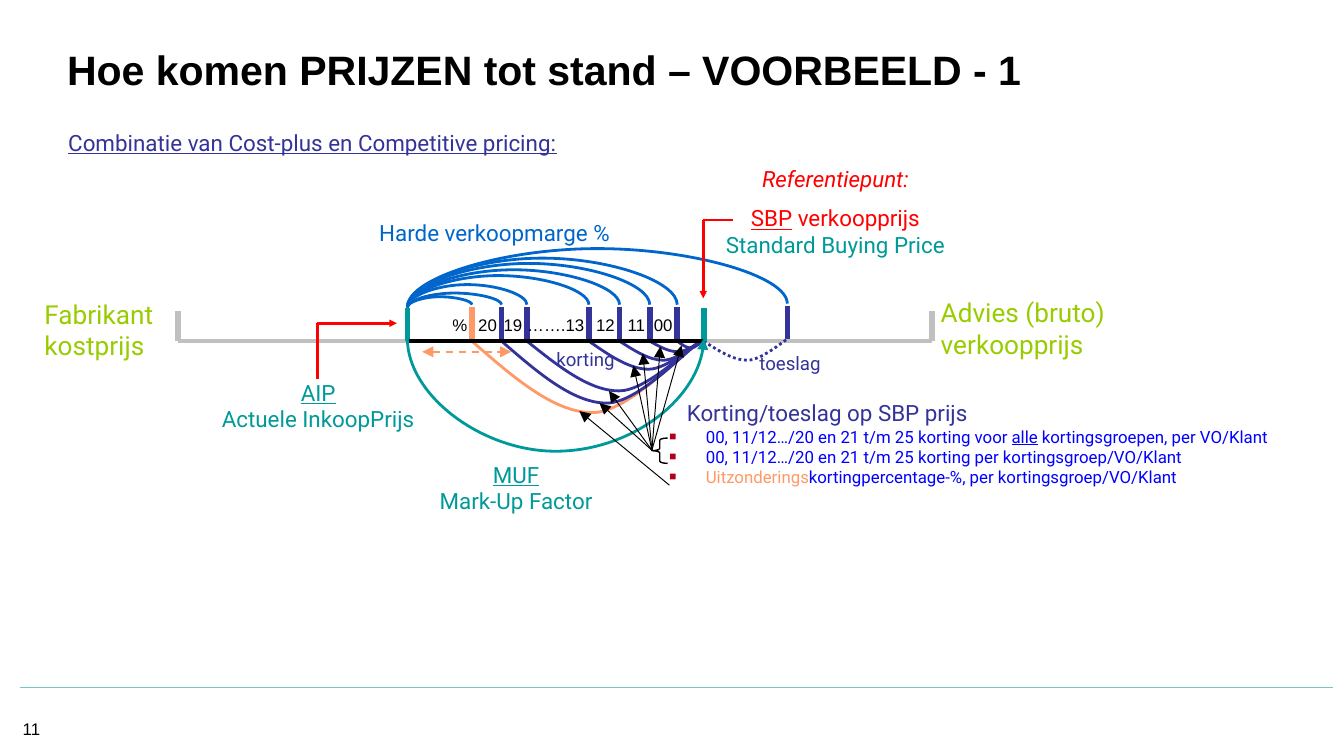
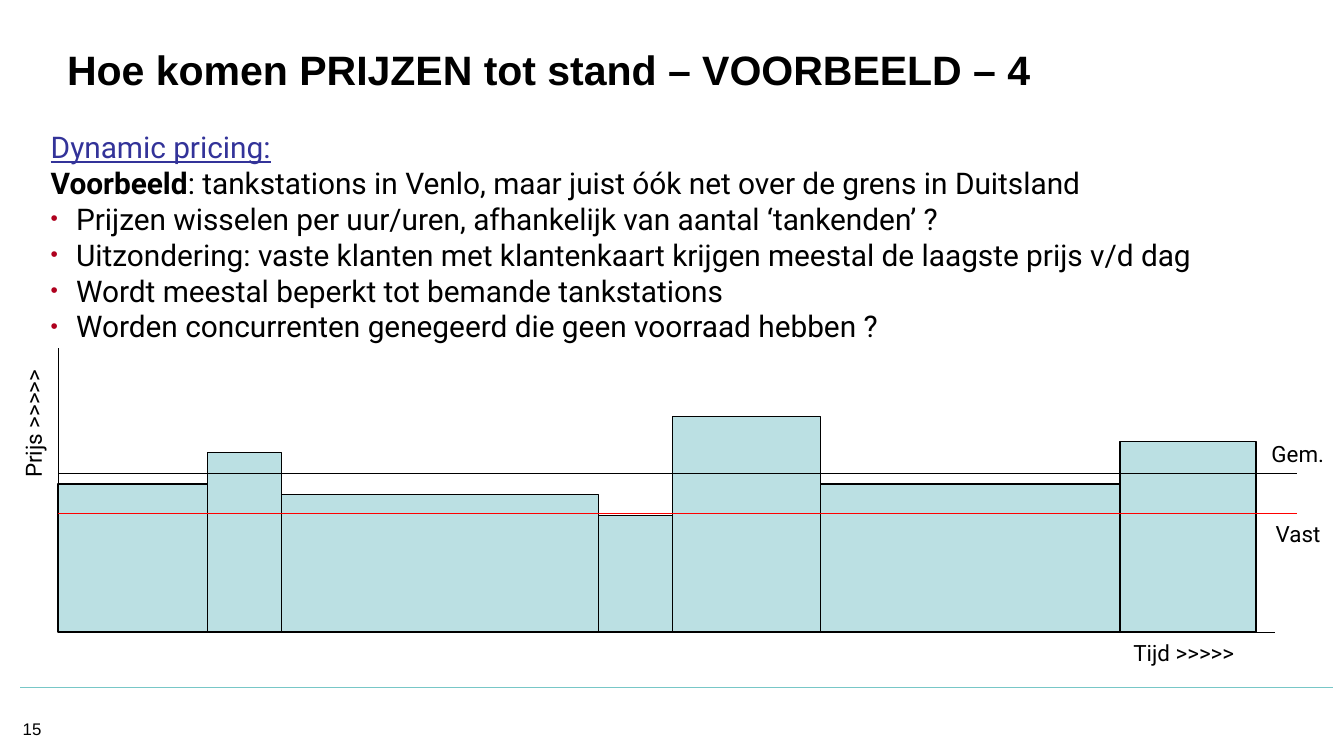
from pptx import Presentation
from pptx.dml.color import RGBColor
from pptx.enum import dml, shapes, text
from pptx.oxml import ns, xmlchemy as xml
from pptx.util import Cm, Pt

BLACK = RGBColor(0, 0, 0)
RED = RGBColor(0xFF, 0, 0)
BLUE = RGBColor(0, 0, 0xFF)
SKY = RGBColor(0, 0x66, 0xCC)
INDIGO = RGBColor(0x33, 0x33, 0x99)
TEAL = RGBColor(0, 0x99, 0x99)
LIME = RGBColor(0x99, 0xCC, 0)
PEACH = RGBColor(0xFF, 0x99, 0x66)
GREY = RGBColor(0xC0, 0xC0, 0xC0)
AQUA = RGBColor(0xBB, 0xE0, 0xE3)
RULE = RGBColor(0x78, 0xC7, 0xC7)
BULLET = "AF011E"

MID = text.PP_ALIGN.CENTER
END = text.PP_ALIGN.RIGHT
DASH = dml.MSO_LINE.DASH
DOT = dml.MSO_LINE.ROUND_DOT
UNDER = {"under": True}

MARKS = [
    ("%", 1.22, -0.84, 1.35, PEACH),
    ("20", 1.78, -0.91, 1.17, INDIGO),
    ("19", 2.26, -1.07, 0.94, INDIGO),
    ("…….13", 3.43, -1.24, 0.53, INDIGO),
    ("12", 4.01, -1.35, 0.36, INDIGO),
    ("11", 4.58, -1.47, 0.2, INDIGO),
    ("00", 5.1, -1.57, 0.13, INDIGO),
]
SBP = 5.6
EXTRA = 7.18
LEFT, RIGHT = -4.34, 9.91
FAN = [(3.63, 1.17), (3.81, 0.94), (4.27, 0.46),
       (4.45, 0.23), (4.78, 0.1), (5.18, 0.08)]
BARS = [(2.82, 2.8), (1.4, 3.4), (5.99, 2.6), (1.4, 2.2),
        (2.8, 4.08), (5.66, 2.8), (2.57, 3.6)]


def node(parent, tag, **attrs):
    item = xml.OxmlElement(tag)
    for key, value in attrs.items():
        item.set(key, str(value))
    parent.append(item)
    return item


def para(*runs, **style):
    return runs, style


def layout(par, margin=0, bullet=None, hang=0):
    props = par._p.get_or_add_pPr()
    props.set("marL", str(Cm(margin + hang)))
    props.set("indent", str(-Cm(hang)))
    if bullet:
        node(node(props, "a:buClr"), "a:srgbClr", val=BULLET)
        node(props, "a:buSzPct", val=70000)
        node(props, "a:buFont", typeface="Arial")
        node(props, "a:buChar", char=bullet)
    else:
        node(props, "a:buNone")


def say(slide, box, *paras, size=12, color=BLACK, font="Roboto", align=None,
        inset=(0.25, 0.13), anchor=text.MSO_ANCHOR.TOP, turn=0, **base):
    shape = slide.shapes.add_textbox(*map(Cm, box))
    shape.rotation = turn
    frame = shape.text_frame
    frame.word_wrap = True
    frame.vertical_anchor = anchor
    frame.margin_left = frame.margin_right = Cm(inset[0])
    frame.margin_top = frame.margin_bottom = Cm(inset[1])
    for i, item in enumerate(paras):
        runs, own = ((item,), {}) if isinstance(item, str) else item
        style = {"size": size, "color": color, **base, **own}
        par = frame.paragraphs[0] if i == 0 else frame.add_paragraph()
        layout(par, **{k: style[k] for k in ("margin", "bullet", "hang")
                       if k in style})
        par.alignment = align
        if "after" in style:
            par.space_after = Pt(style["after"])
        for piece in runs:
            words, extra = (piece, {}) if isinstance(piece, str) else piece
            look = {**style, **extra}
            run = par.add_run()
            run.text = words
            face = run.font
            face.name = font
            face.size = Pt(look["size"])
            face.color.rgb = look["color"]
            face.bold = look.get("bold", False)
            face.italic = look.get("italic", False)
            face.underline = look.get("under", False)


def stroke(shape, color, width, dash=None, head=None, tail=None):
    line = shape.line
    line.color.rgb = color
    line.width = Pt(width)
    if dash:
        line.dash_style = dash
    ends = line._get_or_add_ln()
    for tag, size in (("a:headEnd", head), ("a:tailEnd", tail)):
        if size:
            node(ends, tag, type="triangle", w=size, len=size)


def link(slide, x1, y1, x2, y2, color=BLACK, width=0.75, **ends):
    line = slide.shapes.add_connector(
        shapes.MSO_CONNECTOR.STRAIGHT, Cm(x1), Cm(y1), Cm(x2), Cm(y2))
    stroke(line, color, width, **ends)
    node(line._element.spPr, "a:effectLst")


def curve(slide, start, parts, color, **ends):
    def emu(point):
        return Cm(point[0]), Cm(point[1])

    pen = slide.shapes.build_freeform(*emu(start))
    pen.add_line_segments([emu(part[-1]) for part in parts], close=False)
    shape = pen.convert_to_shape()
    shape.shadow.inherit = False
    shape.fill.background()
    outline = shape._element.find(".//" + ns.qn("a:path"))
    for old in outline.findall(ns.qn("a:lnTo")):
        outline.remove(old)
    for part in parts:
        bend = node(outline, "a:cubicBezTo")
        for px, py in map(emu, part):
            node(bend, "a:pt", x=px - shape.left, y=py - shape.top)
    stroke(shape, color, 1.5, **ends)


def arc(slide, x1, y1, x2, y2, peak, color, **ends):
    wide = x2 - x1
    mid = x1 + wide / 2
    curve(slide, (x1, y1), [
        [(x1, (y1 + peak) / 2), (x1 + wide / 4, peak), (mid, peak)],
        [(x2 - wide / 4, peak), (x2, (y2 + peak) / 2), (x2, y2)],
    ], color, **ends)


def sag(slide, x1, x2, y, deep, color, **ends):
    def at(across, down):
        return x1 + across * (x2 - x1), y + down * deep

    curve(slide, (x1, y), [
        [at(0.17, 0.48), at(0.35, 1), at(0.52, 1)],
        [at(0.68, 1), at(0.92, 0.12), (x2, y - 0.04)],
    ], color, **ends)


def base(deck, title, number):
    slide = deck.slides.add_slide(deck.slide_layouts[6])
    link(slide, 0.38, 13, 25.2, 13, RULE)
    say(slide, (1.27, 0.74, 22.83, 1.12), title, size=22, font="Arial",
        bold=True, inset=(0, 0.1), anchor=text.MSO_ANCHOR.MIDDLE)
    say(slide, (0.2, 13.49, 3.15, 0.99), number, size=9, font="Arial",
        inset=(0.23, 0.1))
    return slide


def scale(slide, x, y):
    for end, near in ((LEFT, 0), (RIGHT, SBP)):
        link(slide, x + end, y, x + end, y - 0.58, GREY, 3)
        link(slide, x + near, y, x + end, y, GREY, 2.25)
    for name, dx, peak, deep, color in MARKS:
        say(slide, (x + dx - 1.4, y - 0.64, 1.4, 0.66), name, size=9,
            font="Arial", align=END, inset=(0.09, 0.13))
        link(slide, x + dx, y - 0.05, x + dx, y - 0.64, color, 3)
        arc(slide, x, y - 0.64, x + dx, y - 0.69, y + peak, SKY)
        sag(slide, x + dx, x + SBP, y, deep, color)
    link(slide, x + EXTRA, y - 0.05, x + EXTRA, y - 0.66, INDIGO, 3)
    arc(slide, x, y - 0.64, x + EXTRA, y - 0.71, y - 1.75, SKY)
    sag(slide, x + SBP, x + EXTRA, y, 0.36, INDIGO, dash=DOT)
    for dx in (0, SBP):
        link(slide, x + dx, y, x + dx, y - 0.62, TEAL, 3)
    link(slide, x, y, x + SBP, y, BLACK, 2.25)
    arc(slide, x, y - 0.05, x + SBP, y - 0.05, y + 2.08, TEAL, tail="med")


def arrows(slide, x, y):
    link(slide, x + 5.59, y - 2.29, x + 5.59, y - 0.81, RED, 1.5, tail="sm")
    link(slide, x + 5.59, y - 2.29, x + 6.15, y - 2.29, RED, 1.5)
    link(slide, x - 1.7, y - 0.34, x - 0.2, y - 0.34, RED, 1.5, tail="sm")
    link(slide, x - 1.7, y - 0.34, x - 1.7, y + 0.71, RED, 1.5)
    link(slide, x + 0.28, y + 0.2, x + 1.96, y + 0.2, PEACH, 1,
         dash=DASH, head="med", tail="med")
    for dx, dy in FAN:
        link(slide, x + 4.62, y + 2.06, x + dx, y + dy, width=0.5, tail="med")
    link(slide, x + 4.95, y + 2.72, x + 3.25, y + 1.32, width=0.5, tail="med")
    brace = slide.shapes.add_shape(
        shapes.MSO_SHAPE.LEFT_BRACE, Cm(x + 4.62), Cm(y + 1.83), Cm(0.3), Cm(0.48))
    brace.adjustments[0] = 0.14
    brace.shadow.inherit = False
    brace.fill.background()
    stroke(brace, BLACK, 0.75)


def labels(slide, x, y):
    def put(dx, dy, wide, high, *paras, **style):
        say(slide, (x + dx, y + dy, wide, high), *paras, **style)

    put(5.46, -3.45, 5.26, 3.38,
        para("Referentiepunt:", italic=True, after=6.5),
        para(("SBP", UNDER), " verkoopprijs"),
        para("Standard Buying Price", color=TEAL), color=RED, align=MID)
    put(9.83, -0.97, 5.13, 1.45, "Advies (bruto) verkoopprijs", size=14, color=LIME)
    put(-7.11, -0.94, 3.02, 1.45, "Fabrikant kostprijs", size=14, color=LIME)
    put(-4.06, 0.58, 4.75, 1.8, para("AIP", **UNDER), "Actuele InkoopPrijs",
        color=TEAL, align=MID)
    put(0.1, 2.13, 3.91, 1.22, para("MUF", **UNDER), "Mark-Up Factor",
        color=TEAL, align=MID)
    put(-1.22, -2.44, 5.74, 0.69, "Harde verkoopmarge %", color=SKY, align=MID)
    put(6.2, 0.08, 2.06, 0.69, "toeslag", size=10, color=INDIGO, align=MID)
    put(2.54, 0, 1.65, 0.69, "korting", size=10, color=INDIGO, align=MID)
    item = {"bullet": "■", "hang": 0.69}
    put(4.7, 0.97, 12.17, 1.93,
        para("Korting/toeslag op SBP prijs", size=12, color=INDIGO, margin=0.33),
        para("00, 11/12…/20 en 21 t/m 25 korting voor ", ("alle", UNDER),
             " kortingsgroepen, per VO/Klant", **item),
        para("00, 11/12…/20 en 21 t/m 25 korting per kortingsgroep/VO/Klant", **item),
        para(("Uitzonderings", {"color": PEACH}),
             "kortingpercentage-%, per kortingsgroep/VO/Klant", **item),
        size=9, color=BLUE)


def points(slide, x, y):
    item = {"bullet": "•", "hang": 0.48}
    say(slide, (x, y, 23.57, 5.56),
        para("Dynamic pricing:", color=INDIGO, under=True),
        para(("Voorbeeld", {"bold": True}),
             ": tankstations in Venlo, maar juist óók net over de grens in Duitsland"),
        para("Prijzen wisselen per uur/uren, afhankelijk van aantal ‘tankenden’ ?", **item),
        para("Uitzondering: vaste klanten met klantenkaart krijgen meestal "
             "de laagste prijs v/d dag", **item),
        para("Wordt meestal beperkt tot bemande tankstations", **item),
        para("Worden concurrenten genegeerd die geen voorraad hebben ?", **item),
        size=16)


def graph(slide, x, y):
    link(slide, x, y, x + 23, y)
    link(slide, x, y, x, y - 5.38)
    left = x
    for wide, high in BARS:
        bar = slide.shapes.add_shape(
            shapes.MSO_SHAPE.RECTANGLE, Cm(left), Cm(y - high), Cm(wide), Cm(high))
        bar.shadow.inherit = False
        bar.fill.solid()
        bar.fill.fore_color.rgb = AQUA
        stroke(bar, BLACK, 0.75)
        left += wide
    for level, color in ((3, BLACK), (2.24, RED)):
        link(slide, x, y - level, x + 23.42, y - level, color)
    for words, dx, dy, wide, turn in (
            ("Tijd >>>>>", 20.07, 0, 3, 0), ("Prijs >>>>>", -1.98, -4.55, 3, 270),
            ("Gem.", 22.68, -3.76, 1.57, 0), ("Vast", 22.76, -2.24, 1.57, 0)):
        say(slide, (x + dx, y + dy, wide, 0.76), words, turn=turn)


def main():
    deck = Presentation()
    deck.slide_width, deck.slide_height = Cm(25.4), Cm(14.29)
    first = base(deck, "Hoe komen PRIJZEN tot stand – VOORBEELD - 1", "11")
    say(first, (0.71, 2.31, 12.17, 0.76),
        "Combinatie van Cost-plus en Competitive pricing:",
        color=INDIGO, under=True, margin=0.33)
    for draw in (scale, arrows, labels):
        draw(first, 7.7, 6.45)
    second = base(deck, "Hoe komen PRIJZEN tot stand – VOORBEELD – 4", "15")
    points(second, 0.71, 2.31)
    graph(second, 1.1, 11.95)
    deck.save("out.pptx")


if __name__ == "__main__":
    main()
